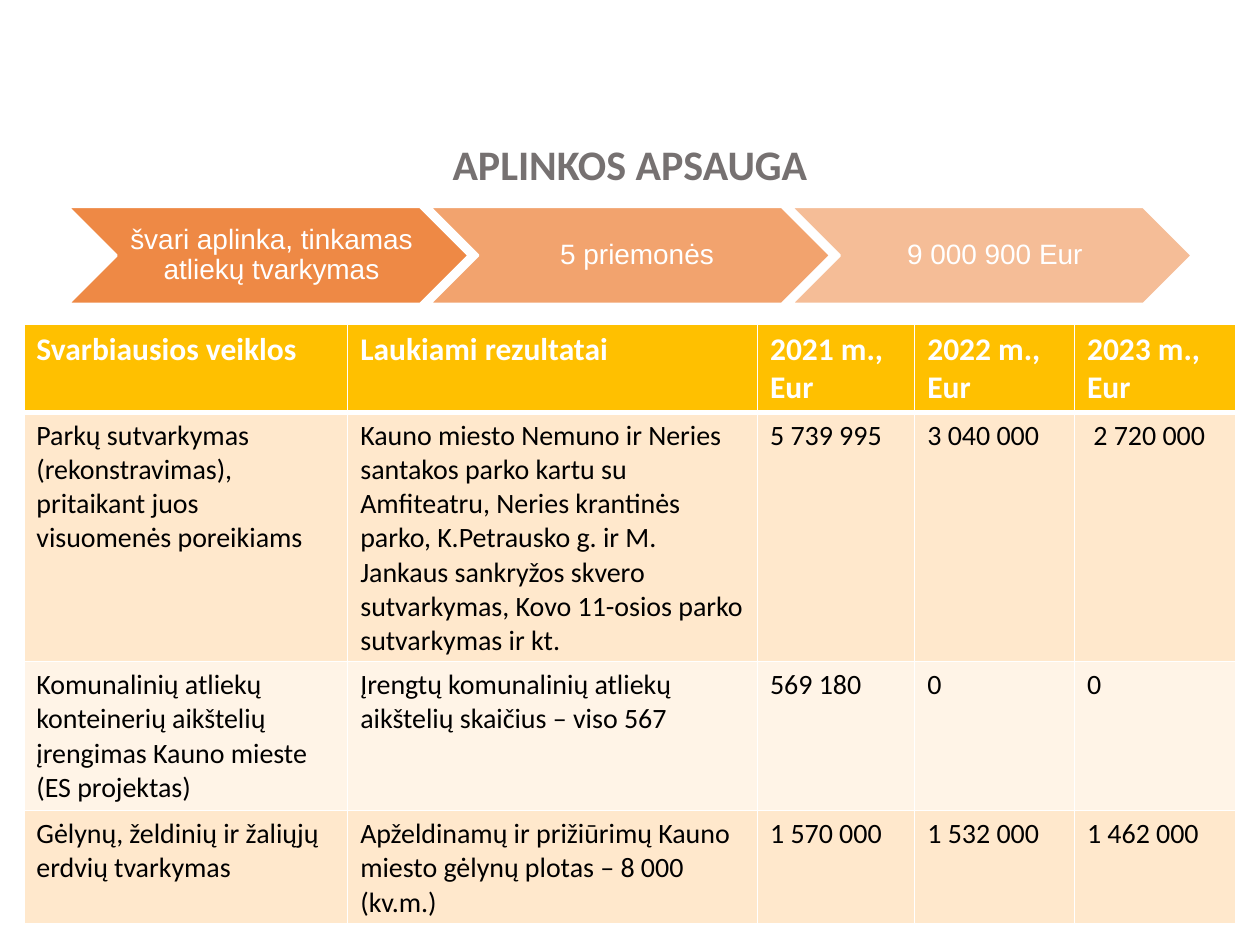
from lxml.etree import SubElement
from pptx import Presentation
from pptx.dml.color import RGBColor
from pptx.enum.shapes import MSO_SHAPE
from pptx.enum.text import MSO_ANCHOR, PP_ALIGN
from pptx.oxml.ns import qn
from pptx.util import Cm, Pt

COLORS = {
    "title": "767171",
    "chevron": "ED7D31",
    "header": "FFC000",
    "odd_row": "FFE8CC",
    "even_row": "FFF4E7",
    "text": "000000",
    "white": "FFFFFF",
}


def style_text(frame, color, **font_format):
    """Apply one font format to every paragraph of a text frame."""
    for paragraph in frame.paragraphs:
        for name, value in font_format.items():
            setattr(paragraph.font, name, value)
        paragraph.font.color.rgb = RGBColor.from_string(COLORS[color])


def add_cell_borders(cell, bottom_width):
    """Draw white borders; call before the cell gets its fill."""
    properties = cell._tc.get_or_add_tcPr()
    for side, width in (("L", 1), ("R", 1), ("T", 1), ("B", bottom_width)):
        border = SubElement(properties, qn(f"a:ln{side}"), w=str(Pt(width)))
        fill = SubElement(border, qn("a:solidFill"))
        SubElement(fill, qn("a:srgbClr"), val=COLORS["white"])


prs = Presentation()
prs.slide_width, prs.slide_height = Cm(25.4), Cm(19.05)
slide = prs.slides.add_slide(prs.slide_layouts[6])

# Title
title = slide.shapes.add_textbox(Cm(1.75), Cm(2.39), Cm(21.9), Cm(1.96)).text_frame
title.word_wrap = True
title.vertical_anchor = MSO_ANCHOR.MIDDLE
title.text = "APLINKOS APSAUGA"
title.paragraphs[0].alignment = PP_ALIGN.CENTER
title.paragraphs[0].line_spacing = 0.9
style_text(title, "title", name="Calibri", size=Pt(24), bold=True)

# Activity table
rows = [
    ["Svarbiausios veiklos", "Laukiami rezultatai",
     "2021 m., Eur", "2022 m., Eur", "2023 m., Eur"],
    ["Parkų sutvarkymas (rekonstravimas), pritaikant juos visuomenės poreikiams",
     "Kauno miesto Nemuno ir Neries santakos parko kartu su Amfiteatru, "
     "Neries krantinės parko, K.Petrausko g. ir M. Jankaus sankryžos skvero "
     "sutvarkymas, Kovo 11-osios parko sutvarkymas ir kt.",
     "5 739 995", "3 040 000", " 2 720 000"],
    ["Komunalinių atliekų konteinerių aikštelių įrengimas Kauno mieste (ES projektas)",
     "Įrengtų komunalinių atliekų aikštelių skaičius – viso 567",
     "569 180", "0", "0"],
    ["Gėlynų, želdinių ir žaliųjų erdvių tvarkymas",
     "Apželdinamų ir prižiūrimų Kauno miesto gėlynų plotas – 8 000 (kv.m.)",
     "1 570 000", "1 532 000", "1 462 000"],
]
column_widths = [6.53, 8.26, 3.17, 3.22, 3.25]
row_heights = [1.78, 5.03, 3, 2.2]

activities = slide.shapes.add_table(
    len(rows), len(column_widths), Cm(0.48), Cm(6.53),
    Cm(sum(column_widths)), Cm(sum(row_heights))).table
for column, width in zip(activities.columns, column_widths):
    column.width = Cm(width)
for row, height in zip(activities.rows, row_heights):
    row.height = Cm(height)

for r, row in enumerate(rows):
    is_header = r == 0
    row_color = "header" if is_header else "odd_row" if r % 2 else "even_row"
    for c, content in enumerate(row):
        cell = activities.cell(r, c)
        add_cell_borders(cell, 3 if is_header else 1)
        cell.fill.solid()
        cell.fill.fore_color.rgb = RGBColor.from_string(COLORS[row_color])
        cell.text = content
        style_text(cell.text_frame, "white" if is_header else "text",
                   name="Calibri", size=Pt(18 if is_header else 16), bold=is_header)

# Chevrons, fading to the right
steps = [
    ("švari aplinka, tinkamas atliekų tvarkymas", 90),
    (" 5 priemonės", 70),
    ("9 000 900 Eur", 50),
]
chevron_text_format = {
    "margin_left": Cm(0.18),
    "margin_top": Cm(0.05),
    "margin_right": Cm(0.05),
    "margin_bottom": Cm(0.05),
    "vertical_anchor": MSO_ANCHOR.MIDDLE,
    "word_wrap": True,
}
for i, (label, opacity) in enumerate(steps):
    chevron = slide.shapes.add_shape(
        MSO_SHAPE.CHEVRON, Cm(1.37 + 7.29 * i), Cm(4.17), Cm(8.08), Cm(1.96))
    chevron.shadow.inherit = False
    chevron.fill.solid()
    chevron.fill.fore_color.rgb = RGBColor.from_string(COLORS["chevron"])
    fill_color = chevron._element.spPr.find(qn("a:solidFill"))[0]
    SubElement(fill_color, qn("a:alpha"), val=str(opacity * 1000))
    chevron.line.color.rgb = RGBColor.from_string(COLORS["white"])
    chevron.line.width = Pt(1.5)

    frame = chevron.text_frame
    for name, value in chevron_text_format.items():
        setattr(frame, name, value)
    frame.text = label
    frame.paragraphs[0].alignment = PP_ALIGN.CENTER
    frame.paragraphs[0].line_spacing = 0.9
    style_text(frame, "white", name="Arial", size=Pt(16))

prs.save("out.pptx")
